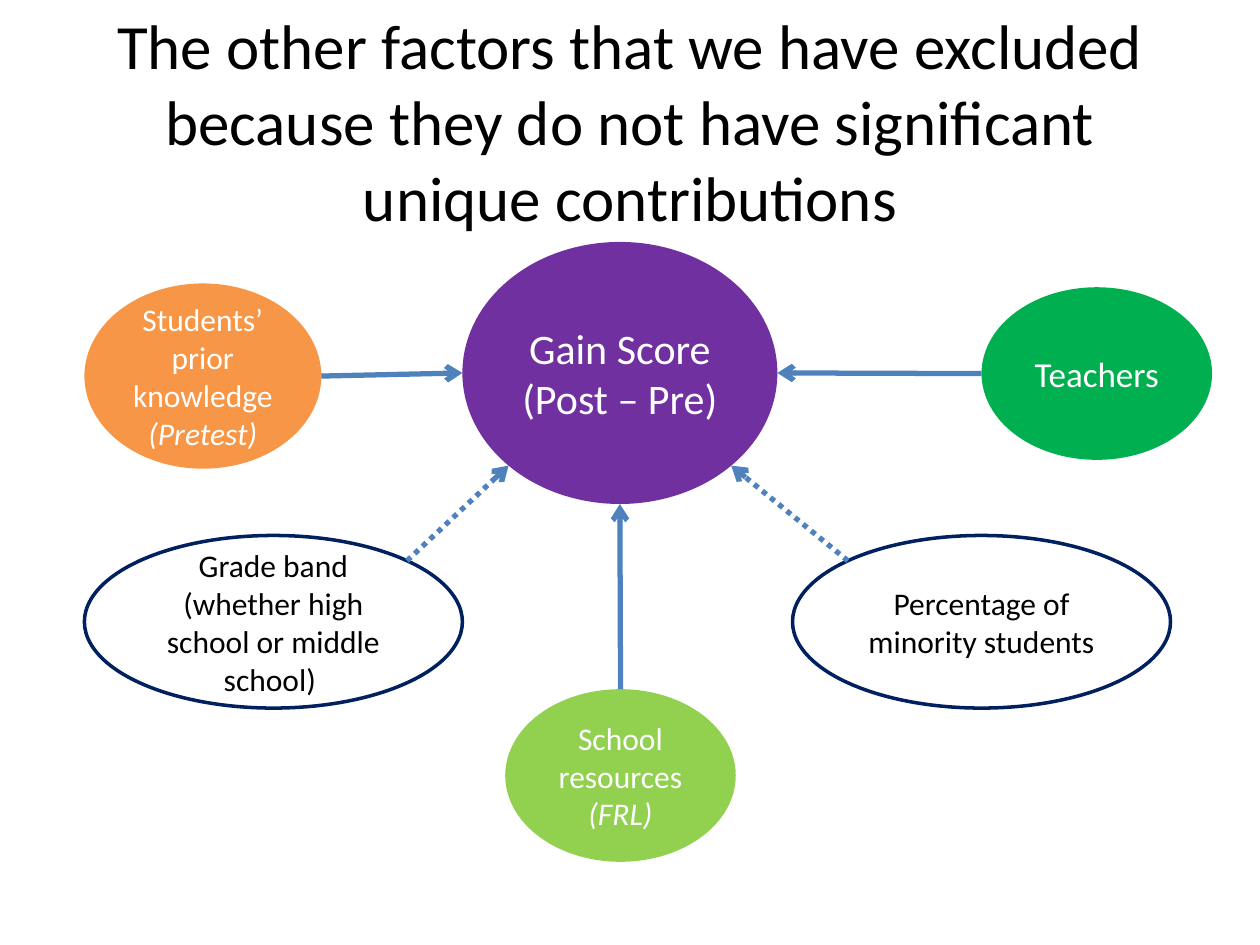
from math import cos, radians, sin

from lxml import etree
from pptx import Presentation
from pptx.dml.color import RGBColor
from pptx.enum.dml import MSO_LINE
from pptx.enum.shapes import MSO_CONNECTOR, MSO_SHAPE
from pptx.enum.text import MSO_ANCHOR, MSO_AUTO_SIZE, PP_ALIGN
from pptx.oxml.ns import qn
from pptx.util import Inches, Pt

STRAIGHT, OVAL = MSO_CONNECTOR.STRAIGHT, MSO_SHAPE.OVAL
DOTTED = MSO_LINE.ROUND_DOT
MIDDLE, CENTER = MSO_ANCHOR.MIDDLE, PP_ALIGN.CENTER
NO_AUTOFIT = MSO_AUTO_SIZE.NONE

BLACK = RGBColor(0x00, 0x00, 0x00)
WHITE = RGBColor(0xFF, 0xFF, 0xFF)
PURPLE = RGBColor(0x70, 0x30, 0xA0)
ORANGE = RGBColor(0xF7, 0x96, 0x46)
GREEN = RGBColor(0x00, 0xB0, 0x50)
LIME = RGBColor(0x92, 0xD0, 0x50)
NAVY = RGBColor(0x00, 0x20, 0x60)
BLUE = RGBColor(0x4F, 0x81, 0xBD)

FONT = "Calibri"
TITLE = ("The other factors that we have excluded because they do not "
         "have significant unique contributions")
TITLE_BOX = (0.5, 0.33, 9, 1.25)

# name: (left, top, width, height), fill (None = outlined), size, text, italic text
FACTORS = {
    "gain": ((3.67, 1.92, 2.5, 2.08), PURPLE, 24, "Gain Score (Post – Pre)", ""),
    "grade": ((0.67, 4.25, 3, 1.37), None, 18,
              "Grade band (whether high school or middle school) ", ""),
    "minority": ((6.29, 4.25, 3, 1.37), None, 18, "Percentage of minority students", ""),
    "resources": ((4.01, 5.47, 1.83, 1.37), LIME, 18, "School resources ", "(FRL)"),
    "pretest": ((0.67, 2.25, 1.88, 1.47), ORANGE, 18,
                "Students’ prior knowledge ", "(Pretest)"),
    "teachers": ((7.79, 2.28, 1.83, 1.37), GREEN, 20, "Teachers", ""),
}

# factor, angle on its rim, angle on the gain score rim (clockwise from right), dotted
ARROWS = [
    ("pretest", 0, 180, False),
    ("resources", 270, 90, False),
    ("teachers", 180, 0, False),
    ("grade", 315, 135, True),
    ("minority", 225, 45, True),
]


def add_run(paragraph, text, size, color, italic=None):
    run = paragraph.add_run()
    run.text = text
    run.font.color.rgb = color
    for name, value in {"name": FONT, "size": Pt(size), "italic": italic}.items():
        setattr(run.font, name, value)


def add_title(slide):
    title = slide.shapes.title
    title.left, title.top, title.width, title.height = map(Inches, TITLE_BOX)
    frame = title.text_frame
    frame.auto_size, frame.vertical_anchor = NO_AUTOFIT, MIDDLE
    frame.paragraphs[0].alignment = CENTER
    add_run(frame.paragraphs[0], TITLE, 36, BLACK)


def add_factor(slide, box, fill, size, text, italic_text):
    shape = slide.shapes.add_shape(OVAL, *map(Inches, box))
    shape.shadow.inherit = False
    if fill is None:
        shape.fill.background()
        shape.line.color.rgb = NAVY
        shape.line.width = Pt(2)
    else:
        shape.fill.solid()
        shape.fill.fore_color.rgb = fill
        shape.line.fill.background()
    frame = shape.text_frame
    frame.word_wrap, frame.vertical_anchor = True, MIDDLE
    paragraph = frame.paragraphs[0]
    paragraph.alignment = CENTER
    color = BLACK if fill is None else WHITE
    add_run(paragraph, text, size, color)
    if italic_text:
        add_run(paragraph, italic_text, size, color, italic=True)


def rim_point(name, angle):
    left, top, width, height = FACTORS[name][0]
    turn = radians(angle)
    return (Inches(left + width / 2 * (1 + cos(turn))),
            Inches(top + height / 2 * (1 + sin(turn))))


def add_arrow(slide, factor, start_angle, end_angle, dotted):
    arrow = slide.shapes.add_connector(
        STRAIGHT, *rim_point(factor, start_angle), *rim_point("gain", end_angle))
    arrow.line.color.rgb = BLUE
    arrow.line.width = Pt(3)
    if dotted:
        arrow.line.dash_style = DOTTED
    etree.SubElement(arrow.line._get_or_add_ln(), qn("a:tailEnd"), type="arrow")
    etree.SubElement(arrow._element.spPr, qn("a:effectLst"))


def main():
    presentation = Presentation()
    presentation.slide_width, presentation.slide_height = Inches(10), Inches(7.5)
    slide = presentation.slides.add_slide(presentation.slide_layouts[5])
    add_title(slide)
    for factor in FACTORS.values():
        add_factor(slide, *factor)
    for arrow in ARROWS:
        add_arrow(slide, *arrow)
    presentation.save("out.pptx")


if __name__ == "__main__":
    main()
